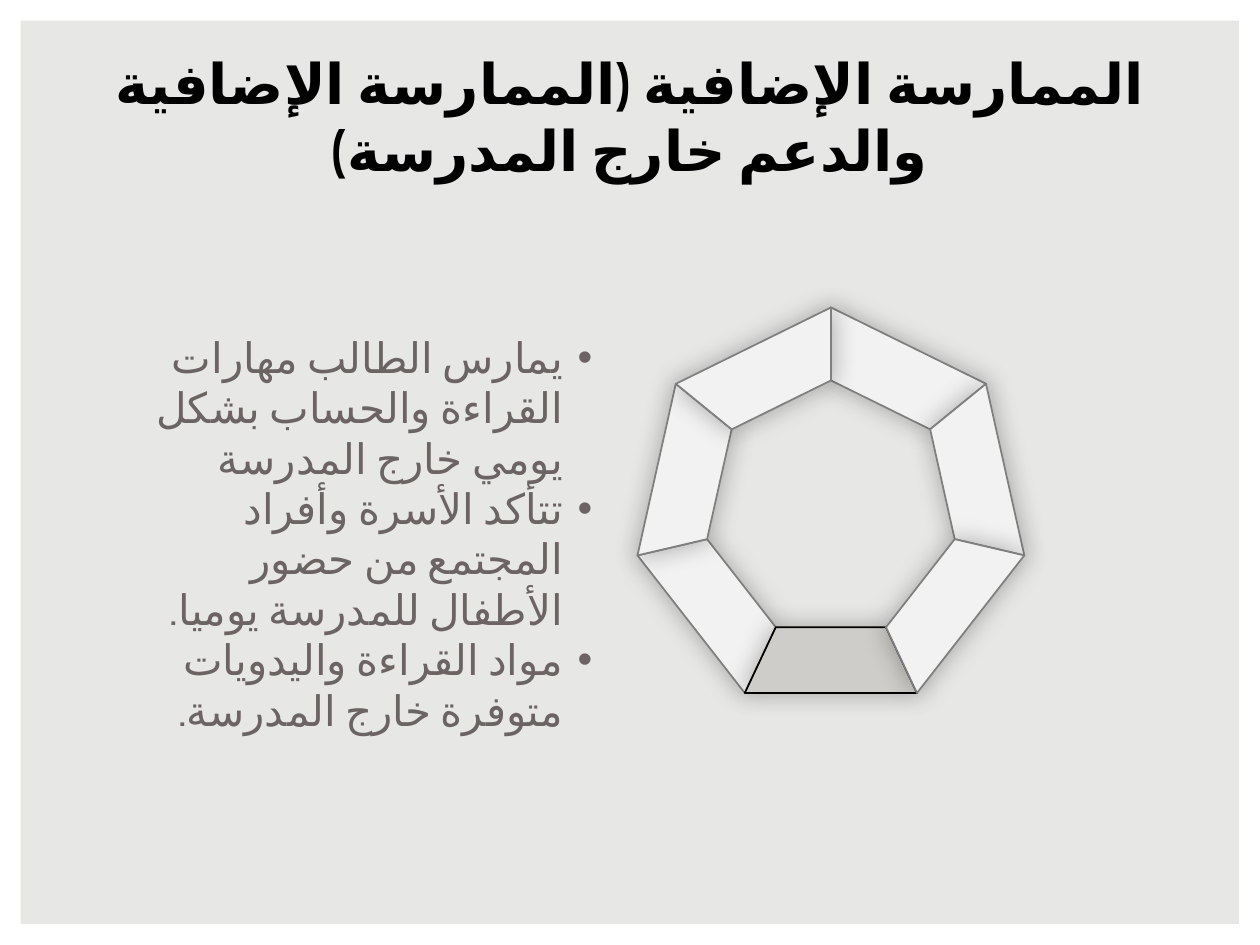
import math
from dataclasses import dataclass

import pptx
import pptx.dml.color
import pptx.enum.lang
import pptx.enum.shapes
import pptx.enum.text
import pptx.oxml.ns
import pptx.util
from lxml import etree

COLUMNS, ROWS = 40, 30


@dataclass(frozen=True)
class Theme:
    font: str = "Cabin"
    backdrop: str = "E7E7E5"
    frame: str = "FFFFFF"
    title: str = "000000"
    body: str = "6C6463"
    segment: str = "F2F2F2"
    segment_line: str = "7F7F7F"
    active: str = "CFCDC9"
    active_line: str = "000000"
    title_size: int = 32
    body_size: int = 24


THEME = Theme()
TITLE = "الممارسة الإضافية (الممارسة الإضافية والدعم خارج المدرسة)"
BULLETS = [
    "يمارس الطالب مهارات القراءة والحساب بشكل يومي خارج المدرسة",
    "تتأكد الأسرة وأفراد المجتمع من حضور  الأطفال للمدرسة يوميا.",
    "مواد القراءة واليدويات متوفرة خارج المدرسة.",
]


def rgb(value):
    return pptx.dml.color.RGBColor.from_string(value)


def grid_box(deck, column, row, columns, rows):
    """Turn grid units into left, top, width and height."""
    across, down = deck.slide_width / COLUMNS, deck.slide_height / ROWS
    return [round(n) for n in (column * across, row * down, columns * across, rows * down)]


def add_element(parent, tag, **attributes):
    return etree.SubElement(parent, pptx.oxml.ns.qn(tag), attributes)


def write_para(para, text, *, size, color, align, bold=False, bullet=None, indent=0):
    """Fill a right-to-left paragraph, with a hanging bullet if one is given."""
    para.alignment = align
    properties = para._p.get_or_add_pPr()
    properties.set("rtl", "1")
    if bullet:
        hang = pptx.util.Inches(indent)
        properties.set("marR", str(hang))
        properties.set("marL", str(hang))
        properties.set("indent", str(-hang))
        bullet_color = add_element(properties, "a:buClr")
        add_element(bullet_color, "a:srgbClr", val=color)
        add_element(properties, "a:buFont", typeface="Arial")
        add_element(properties, "a:buChar", char=bullet)
    span = para.add_run()
    span.text = text
    span.font.size = pptx.util.Pt(size)
    span.font.bold = bold
    span.font.color.rgb = rgb(color)
    span.font.name = THEME.font
    span.font.language_id = pptx.enum.lang.MSO_LANGUAGE_ID.ARABIC
    add_element(span._r.get_or_add_rPr(), "a:cs", typeface=THEME.font)


def draw_frame(page, box):
    page.background.fill.solid()
    page.background.fill.fore_color.rgb = rgb(THEME.backdrop)
    frame = page.shapes.add_shape(pptx.enum.shapes.MSO_SHAPE.FRAME, *box)
    frame.adjustments[0] = 0.022
    frame.shadow.inherit = False
    frame.fill.solid()
    frame.fill.fore_color.rgb = rgb(THEME.frame)
    frame.line.fill.background()


def draw_title(page, box):
    title = page.shapes.title
    title.left, title.top, title.width, title.height = box
    frame = title.text_frame
    frame.auto_size = pptx.enum.text.MSO_AUTO_SIZE.NONE
    frame.vertical_anchor = pptx.enum.text.MSO_ANCHOR.BOTTOM
    write_para(frame.paragraphs[0], TITLE, size=THEME.title_size, color=THEME.title,
               align=pptx.enum.text.PP_ALIGN.CENTER, bold=True)


def draw_bullets(page, box):
    frame = page.shapes.add_textbox(*box).text_frame
    frame.word_wrap = True
    frame.margin_left = frame.margin_right = pptx.util.Inches(0.07)
    frame.margin_top = frame.margin_bottom = 0
    for index, text in enumerate(BULLETS):
        para = frame.add_paragraph() if index else frame.paragraphs[0]
        write_para(para, text, size=THEME.body_size, color=THEME.body,
                   align=pptx.enum.text.PP_ALIGN.RIGHT, bullet="•", indent=0.23)


def add_glow_shadow(shape, blur, opacity):
    shape.shadow.inherit = False
    effects = shape._element.spPr.find(pptx.oxml.ns.qn("a:effectLst"))
    shadow = add_element(effects, "a:outerShdw", blurRad=str(pptx.util.Pt(blur)),
                         dist="0", dir="0", algn="ctr", rotWithShape="0")
    color = add_element(shadow, "a:srgbClr", val="000000")
    add_element(color, "a:alpha", val=str(opacity * 1000))


def draw_ring(page, box, sides=7, active=3, hole=0.64):
    """Draw a heptagon ring, one segment for each side, clockwise from the top."""
    left, top, width, height = box
    radius_x = width / 2 / math.sin(4 * math.pi / sides)
    radius_y = height / (1 + math.cos(math.pi / sides))

    def corner(index, scale):
        angle = 2 * math.pi * index / sides
        return (round(left + width / 2 + scale * radius_x * math.sin(angle)),
                round(top + radius_y - scale * radius_y * math.cos(angle)))

    ring = page.shapes.add_group_shape()
    for side in (0, 4, 3, 5, 6, 1, 2):  # back to front, so the shadows overlap
        builder = ring.shapes.build_freeform(*corner(side, 1))
        builder.add_line_segments([corner(side + 1, 1), corner(side + 1, hole),
                                   corner(side, hole)], close=True)
        segment = builder.convert_to_shape()
        segment.fill.solid()
        segment.fill.fore_color.rgb = rgb(THEME.active if side == active else THEME.segment)
        segment.line.color.rgb = rgb(THEME.active_line if side == active
                                     else THEME.segment_line)
        segment.line.width = pptx.util.Pt(1)
        add_glow_shadow(segment, blur=15, opacity=30)


def main():
    deck = pptx.Presentation()
    deck.slide_width, deck.slide_height = pptx.util.Inches(10), pptx.util.Inches(7.5)
    page = deck.slides.add_slide(deck.slide_layouts.get_by_name("Title Only"))
    draw_frame(page, grid_box(deck, 0, 0, COLUMNS, ROWS))
    draw_bullets(page, grid_box(deck, 1.96, 10.52, 17.12, 6.36))
    draw_ring(page, grid_box(deck, 20.24, 9.76, 12.28, 12.24))
    draw_title(page, grid_box(deck, 3, 2, 34, 4))
    deck.save("out.pptx")


if __name__ == "__main__":
    main()
